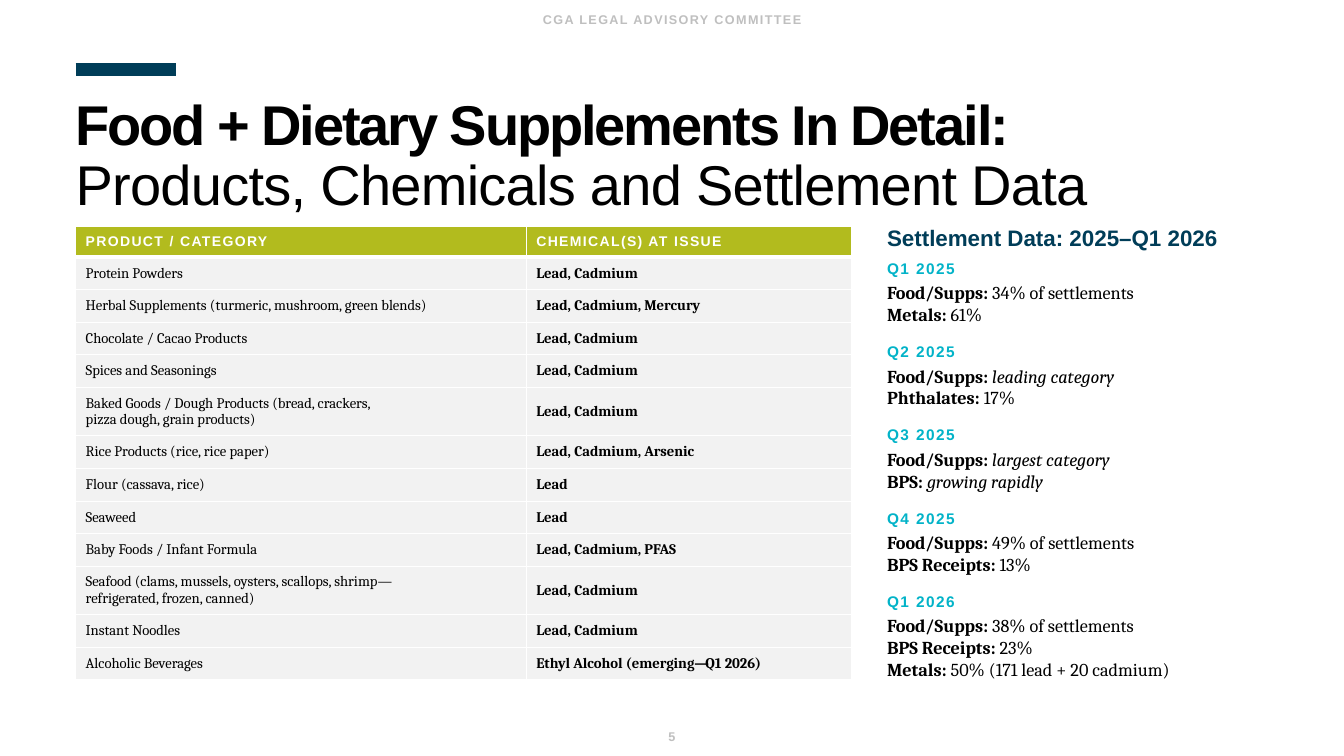
from copy import deepcopy

from pptx import Presentation
from pptx.dml.color import RGBColor
from pptx.enum.shapes import MSO_CONNECTOR as Connector
from pptx.enum.text import MSO_ANCHOR as Anchor, PP_ALIGN as Align
from pptx.oxml.ns import qn
from pptx.oxml.xmlchemy import OxmlElement
from pptx.util import Inches, Pt

NAVY, TEAL, LIME = "003D58", "02B3C8", "B2BB1E"
BLACK, WHITE, PALE, GREY = "000000", "FFFFFF", "F2F2F2", "BFBFBF"
SANS, SERIF = "Arial", "Cambria"

HEADER_HEIGHT, TALL_ROW, TABLE_HEIGHT = 0.3, 0.48, 4.5
COLUMN_WIDTHS = (4.47, 3.23)
HEADERS = ("PRODUCT / CATEGORY", "CHEMICAL(S) AT ISSUE")
PRODUCTS = [
    ("Protein Powders", "Lead, Cadmium"),
    ("Herbal Supplements (turmeric, mushroom, green blends)", "Lead, Cadmium, Mercury"),
    ("Chocolate / Cacao Products", "Lead, Cadmium"),
    ("Spices and Seasonings", "Lead, Cadmium"),
    ("Baked Goods / Dough Products (bread, crackers, \vpizza dough, grain products)", "Lead, Cadmium"),
    ("Rice Products (rice, rice paper)", "Lead, Cadmium, Arsenic"),
    ("Flour (cassava, rice)", "Lead"),
    ("Seaweed", "Lead"),
    ("Baby Foods / Infant Formula", "Lead, Cadmium, PFAS"),
    ("Seafood (clams, mussels, oysters, scallops, shrimp—\vrefrigerated, frozen, canned)", "Lead, Cadmium"),
    ("Instant Noodles", "Lead, Cadmium"),
    ("Alcoholic Beverages", "Ethyl Alcohol (emerging―Q1 2026)"),
]

# Quarter, then lines of (label, value, value is italic)
SETTLEMENTS = [
    ("Q1 2025", [("Food/Supps:", "34% of settlements", False), ("Metals:", "61%", False)]),
    ("Q2 2025", [("Food/Supps:", "leading category", True), ("Phthalates:", "17%", False)]),
    ("Q3 2025", [("Food/Supps:", "largest category", True), ("BPS:", "growing rapidly", True)]),
    ("Q4 2025", [("Food/Supps:", "49% of settlements", False), ("BPS Receipts:", "13%", False)]),
    ("Q1 2026", [("Food/Supps:", "38% of settlements", False), ("BPS Receipts:", "23%", False),
                 ("Metals:", "50% (171 lead + 20 cadmium)", False)]),
]


def color(hex_code):
    return RGBColor.from_string(hex_code)


def format_run(span, size, font, hex_code, bold=False, italic=False, spacing=0):
    span.font.size = Pt(size)
    span.font.name = font
    span.font.color.rgb = color(hex_code)
    span.font.bold = bold
    span.font.italic = italic
    if spacing:
        span.font._element.set("spc", str(int(spacing * 100)))


def size_breaks(para):
    """Give line breaks the formatting of the first run."""
    for line_break in para._p.findall(qn("a:br")):
        line_break.insert(0, deepcopy(para.runs[0].font._element))


def write_para(para, text, *style, **options):
    para.text = text
    for span in para.runs:
        format_run(span, *style, **options)
    size_breaks(para)


def add_text_box(page, left, top, width, height, anchor=Anchor.TOP):
    box = page.shapes.add_textbox(Inches(left), Inches(top), Inches(width), Inches(height))
    box.text_frame.word_wrap = True
    box.text_frame.vertical_anchor = anchor
    return box.text_frame


def add_running_line(page, top, text):
    para = add_text_box(page, 0, top, 13.33, 0.38, Anchor.MIDDLE).paragraphs[0]
    para.alignment = Align.CENTER
    write_para(para, text, 9, SANS, GREY, bold=True, spacing=1)


def add_accent_bar(page):
    bar = page.shapes.add_connector(
        Connector.STRAIGHT, Inches(0.75), Inches(0.69), Inches(1.75), Inches(0.69))
    bar.line.color.rgb = color(NAVY)
    bar.line.width = Pt(9)
    bar._element.spPr.append(OxmlElement("a:effectLst"))


def add_title(page):
    frame = add_text_box(page, 0.75, 0.76, 11.83, 0.83)
    frame.margin_left = frame.margin_right = frame.margin_bottom = 0
    frame.margin_top = Inches(0.2)
    para = frame.paragraphs[0]
    para.line_spacing = 0.9
    para.text = "Food + Dietary Supplements In Detail:\vProducts, Chemicals and Settlement Data"
    topic, detail = para.runs
    format_run(topic, 40, SANS, BLACK, bold=True, spacing=-1.5)
    format_run(detail, 40, SANS, BLACK, spacing=-0.5)
    size_breaks(para)


def set_borders(cell, bottom):
    properties = cell._tc.get_or_add_tcPr()
    for index, (side, width) in enumerate((("L", 1), ("R", 1), ("T", 1), ("B", bottom))):
        border = OxmlElement(f"a:ln{side}")
        border.set("w", str(Pt(width)))
        fill = OxmlElement("a:solidFill")
        shade = OxmlElement("a:srgbClr")
        shade.set("val", WHITE)
        fill.append(shade)
        border.append(fill)
        properties.insert(index, border)


def fill_cell(cell, text, hex_fill, bottom, *style, **options):
    cell.fill.solid()
    cell.fill.fore_color.rgb = color(hex_fill)
    cell.vertical_anchor = Anchor.MIDDLE
    set_borders(cell, bottom)
    write_para(cell.text_frame.paragraphs[0], text, *style, **options)


def add_product_table(page):
    table = page.shapes.add_table(
        len(PRODUCTS) + 1, 2, Inches(0.75), Inches(2.25),
        Inches(sum(COLUMN_WIDTHS)), Inches(TABLE_HEIGHT)).table
    for column, width in zip(table.columns, COLUMN_WIDTHS):
        column.width = Inches(width)

    # Two-line rows are tall; the others share what is left
    tall = ["\v" in product for product, _ in PRODUCTS]
    low_row = (TABLE_HEIGHT - HEADER_HEIGHT - TALL_ROW * sum(tall)) / tall.count(False)
    heights = [HEADER_HEIGHT] + [TALL_ROW if is_tall else low_row for is_tall in tall]
    for row, height in zip(table.rows, heights):
        row.height = Inches(height)

    for column, header in enumerate(HEADERS):
        fill_cell(table.cell(0, column), header, LIME, 3, 10, SANS, WHITE, bold=True, spacing=1)
    for row, texts in enumerate(PRODUCTS, 1):
        for column, text in enumerate(texts):
            fill_cell(table.cell(row, column), text, PALE, 1, 10.5, SERIF, BLACK, bold=column == 1)


def add_settlements(page):
    frame = add_text_box(page, 8.7, 2.17, 3.88, 4.57)
    write_para(frame.paragraphs[0], "Settlement Data: 2025–Q1 2026", 16, SANS, NAVY, bold=True)
    for index, (quarter, lines) in enumerate(SETTLEMENTS):
        heading = frame.add_paragraph()
        heading.space_before = Pt(12 if index else 6)
        write_para(heading, quarter, 11, SANS, TEAL, bold=True, spacing=1)

        figures = frame.add_paragraph()
        figures.space_before = Pt(3)
        for number, (label, value, italic) in enumerate(lines):
            if number:
                figures.add_line_break()
            for text, bold, slanted in ((f"{label} ", True, False), (value, False, italic)):
                span = figures.add_run()
                span.text = text
                format_run(span, 13, SERIF, BLACK, bold, slanted)
        size_breaks(figures)


def main():
    deck = Presentation()
    deck.slide_width, deck.slide_height = Inches(13.33), Inches(7.5)
    page = deck.slides.add_slide(deck.slide_layouts[6])
    add_accent_bar(page)
    add_product_table(page)
    add_title(page)
    add_running_line(page, 7.12, "5")
    add_running_line(page, 0, "CGA LEGAL ADVISORY COMMITTEE")
    add_settlements(page)
    deck.save("out.pptx")


if __name__ == "__main__":
    main()
